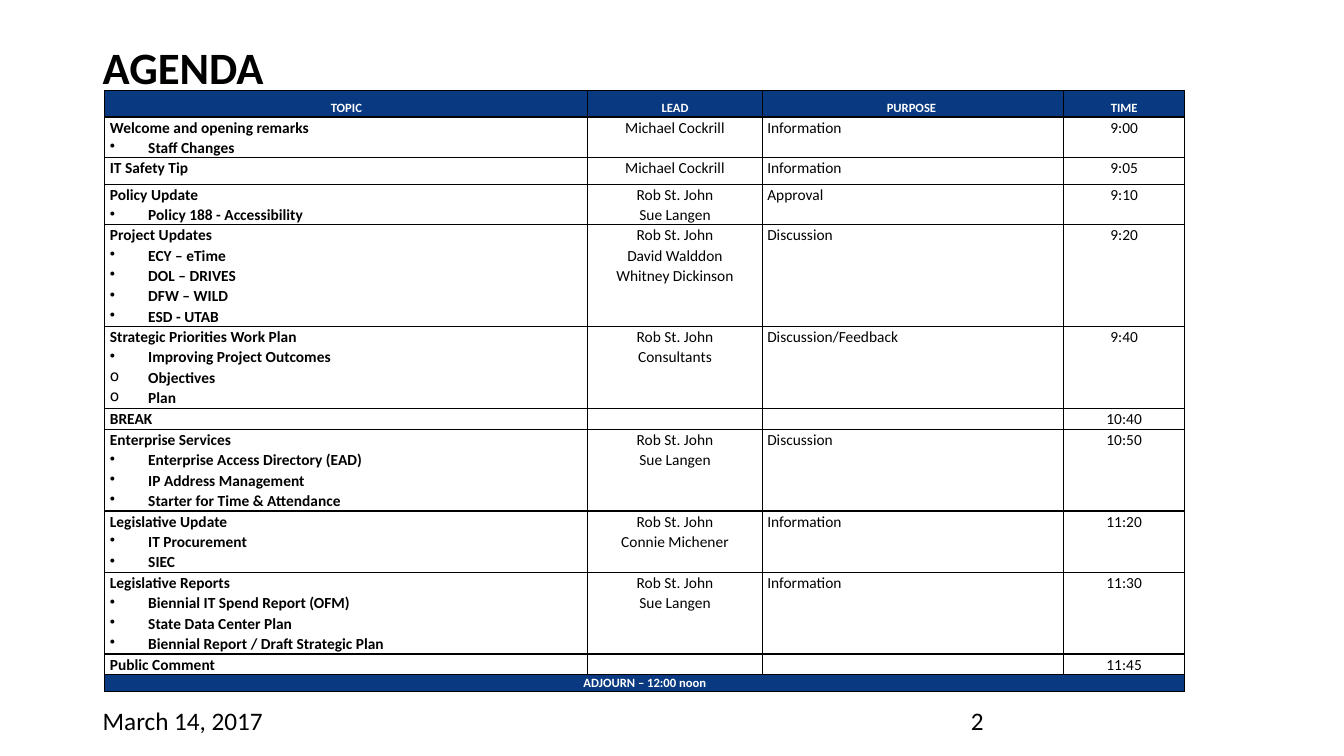
"""Build the meeting agenda slide: title, schedule table, date and page number."""
from lxml import etree
from pptx import Presentation
from pptx.dml.color import RGBColor
from pptx.enum import text as t
from pptx.oxml import ns
from pptx.util import Inches, Pt

TITLE = "AGENDA"
DATE = "March 14, 2017"
PAGE = "2"
HEADINGS = ["TOPIC", "LEAD", "\tPURPOSE", "TIME"]
ADJOURN = "ADJOURN – 12:00 noon"
AGENDA = [
    ("Welcome and opening remarks", [("•", "Staff Changes")],
     ["Michael Cockrill"], "Information", "9:00"),
    ("IT Safety Tip", [], ["Michael Cockrill"], "Information", "9:05"),
    ("Policy Update", [("•", "Policy 188 - Accessibility")],
     ["Rob St. John", "Sue Langen"], "Approval", "9:10"),
    ("Project Updates",
     [("•", "ECY – eTime"), ("•", "DOL – DRIVES"), ("•", "DFW – WILD"), ("•", "ESD - UTAB")],
     ["Rob St. John", "David Walddon", "Whitney Dickinson"], "Discussion", "9:20"),
    ("Strategic Priorities Work Plan",
     [("•", "Improving Project Outcomes"), ("o", "Objectives"), ("o", "Plan")],
     ["Rob St. John", "Consultants"], "Discussion/Feedback", "9:40"),
    ("BREAK", [], [""], "", "10:40"),
    ("Enterprise Services",
     [("•", "Enterprise Access Directory (EAD)"), ("•", "IP Address Management"),
      ("•", "Starter for Time & Attendance")],
     ["Rob St. John", "Sue Langen"], "Discussion", "10:50"),
    ("Legislative Update", [("•", "IT Procurement"), ("•", "SIEC")],
     ["Rob St. John", "Connie Michener"], "Information", "11:20"),
    ("Legislative Reports",
     [("•", "Biennial IT Spend Report (OFM)"), ("•", "State Data Center Plan"),
      ("•", "Biennial Report / Draft Strategic Plan")],
     ["Rob St. John", "Sue Langen"], "Information", "11:30"),
    ("Public Comment", [], [""], "", "11:45"),
]
COLUMN_WIDTHS = [4.79, 1.73, 2.99, 1.2]
ROW_HEIGHTS = [0.26, 0.4, 0.27, 0.4, 1.01, 0.81, 0.21, 0.81, 0.61, 0.81, 0.2, 0.17]
THEME = {
    "font": "Calibri", "ink": "000000", "paper": "FFFFFF", "band": "093A81",
    "title": 32, "footer": 18, "body": 11, "heading": 9,
    "rule": 1, "heavy_rule": 2.25, "spacing": 1.07,
}
LEFT, CENTER = t.PP_ALIGN.LEFT, t.PP_ALIGN.CENTER


def style(paragraph, size, color=THEME["ink"], bold=False):
    font = paragraph.font
    font.name, font.size, font.bold = THEME["font"], Pt(size), bold
    font.color.rgb = RGBColor.from_string(color)


def add_label(slide, words, box, size, bold=False, anchor=t.MSO_ANCHOR.MIDDLE):
    frame = slide.shapes.add_textbox(*map(Inches, box)).text_frame
    frame.word_wrap = True
    frame.vertical_anchor = anchor
    label = frame.paragraphs[0]
    label.text = words
    style(label, size, bold=bold)
    return label


def add_bullet(paragraph, mark):
    properties = paragraph._p.get_or_add_pPr()
    properties.set("marL", str(Inches(0.38)))
    properties.set("indent", str(-Inches(0.38)))
    etree.SubElement(properties, ns.qn("a:buChar")).set("char", mark)


def add_center_tab(paragraph, position):
    tabs = etree.SubElement(paragraph._p.get_or_add_pPr(), ns.qn("a:tabLst"))
    tab = etree.SubElement(tabs, ns.qn("a:tab"))
    tab.set("pos", str(Inches(position)))
    tab.set("algn", "ctr")


def dress_cell(cell, fill, top=THEME["rule"], bottom=THEME["rule"]):
    cell.margin_left = cell.margin_right = Inches(0.05)
    cell.margin_top = cell.margin_bottom = 0
    cell.fill.solid()
    cell.fill.fore_color.rgb = RGBColor.from_string(fill)
    widths = {"L": THEME["rule"], "R": THEME["rule"], "T": top, "B": bottom}
    for place, (side, width) in enumerate(widths.items()):
        line = etree.Element(ns.qn(f"a:ln{side}"), w=str(Pt(width)))
        paint = etree.SubElement(line, ns.qn("a:solidFill"))
        etree.SubElement(paint, ns.qn("a:srgbClr"), val=THEME["ink"])
        cell._tc.get_or_add_tcPr().insert(place, line)


def write_cell(cell, lines, align, size=THEME["body"], color=THEME["ink"],
               bold=False, spacing=THEME["spacing"]):
    for number, (mark, words) in enumerate(lines):
        frame = cell.text_frame
        paragraph = frame.add_paragraph() if number else frame.paragraphs[0]
        paragraph.text = words
        paragraph.alignment = align
        paragraph.line_spacing = spacing
        if mark:
            add_bullet(paragraph, mark)
        if words.startswith("\t"):
            add_center_tab(paragraph, 1.43)
        style(paragraph, size, color, bold)


def add_schedule(slide):
    table = slide.shapes.add_table(
        len(ROW_HEIGHTS), len(COLUMN_WIDTHS), Inches(1.04), Inches(0.9),
        Inches(sum(COLUMN_WIDTHS)), Inches(sum(ROW_HEIGHTS))).table
    table.first_row = table.horz_banding = False
    for column, width in zip(table.columns, COLUMN_WIDTHS):
        column.width = Inches(width)
    for row, height in zip(table.rows, ROW_HEIGHTS):
        row.height = Inches(height)

    last = len(ROW_HEIGHTS) - 1
    band_text = {"size": THEME["heading"], "color": THEME["paper"], "bold": True}
    for col, heading in enumerate(HEADINGS):
        dress_cell(table.cell(0, col), THEME["band"], bottom=THEME["heavy_rule"])
        write_cell(table.cell(0, col), [("", heading)],
                   LEFT if heading.startswith("\t") else CENTER,
                   spacing=Pt(18), **band_text)
        dress_cell(table.cell(last, col), THEME["band"])

    for row, (topic, points, leads, purpose, time) in enumerate(AGENDA, 1):
        columns = [
            ([("", topic), *points], LEFT, True),
            ([("", lead) for lead in leads], CENTER, False),
            ([("", purpose)], LEFT, False),
            ([("", time)], CENTER, False),
        ]
        top = THEME["heavy_rule"] if row == 1 else THEME["rule"]
        for col, (lines, align, bold) in enumerate(columns):
            dress_cell(table.cell(row, col), THEME["paper"], top=top)
            write_cell(table.cell(row, col), lines, align, bold=bold)

    table.cell(last, 0).merge(table.cell(last, len(HEADINGS) - 1))
    write_cell(table.cell(last, 0), [("", ADJOURN)], CENTER, **band_text)


def main():
    deck = Presentation()
    deck.slide_width, deck.slide_height = Inches(13.33), Inches(7.5)
    slide = deck.slides.add_slide(deck.slide_layouts[6])
    title = add_label(slide, TITLE, (0.92, 0.4, 11.5, 1.45), THEME["title"],
                      bold=True, anchor=t.MSO_ANCHOR.TOP)
    title.line_spacing = 0.9
    add_label(slide, DATE, (0.92, 6.95, 3, 0.4), THEME["footer"])
    add_label(slide, PAGE, (9.53, 6.95, 0.95, 0.4), THEME["footer"])
    add_schedule(slide)
    deck.save("out.pptx")


if __name__ == "__main__":
    main()
